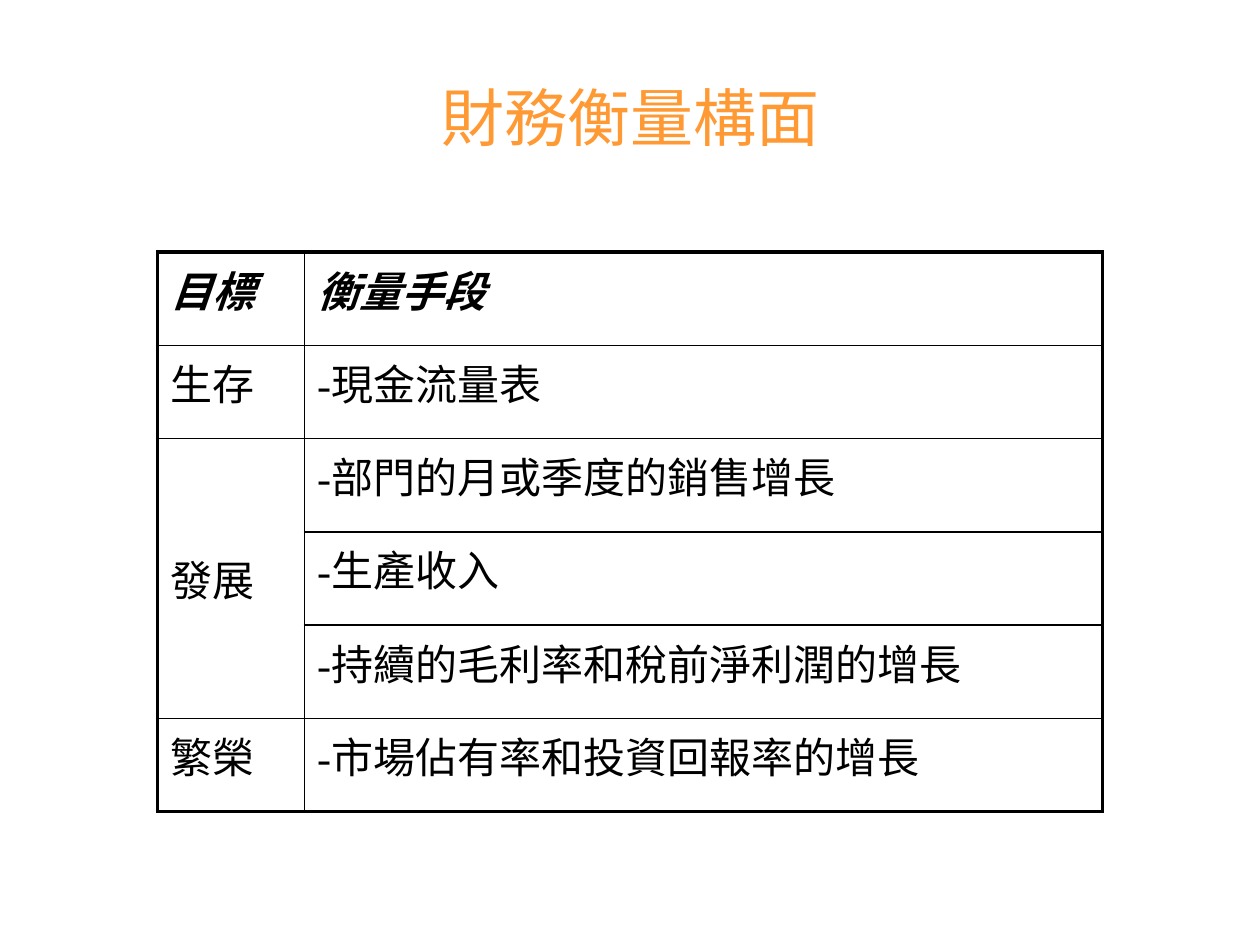
from typing import NamedTuple

from lxml.etree import SubElement
from pptx import Presentation
from pptx.dml.color import RGBColor
from pptx.enum.text import MSO_ANCHOR, PP_ALIGN
from pptx.oxml.ns import qn
from pptx.util import Pt

CJK_FONT = "Noto Sans CJK JP"
LATIN_FONT = "Times New Roman"
ORANGE = "FF9933"
BLACK = "000000"
THIN, THICK = 1, 2.25
ROW_HEIGHT = 53.3
COLUMN_WIDTHS = (84, 456)


class Goal(NamedTuple):
    name: str
    measures: tuple[str, ...]
    header: bool = False


GOALS = (
    Goal("目標", ("衡量手段",), header=True),
    Goal("生存", ("-現金流量表",)),
    Goal("發展", ("-部門的月或季度的銷售增長", "-生產收入", "-持續的毛利率和稅前淨利潤的增長")),
    Goal("繁榮", ("-市場佔有率和投資回報率的增長",)),
)


def color(value: str) -> RGBColor:
    return RGBColor.from_string(value)


def write(frame, text: str, latin: str, fill: str, **formats) -> None:
    para = frame.paragraphs[0]
    span = para.add_run()
    span.text = text
    for name, value in {"name": latin, **formats}.items():
        setattr(span.font, name, value)
    span.font.color.rgb = color(fill)
    # East Asian glyphs take their own typeface
    SubElement(span.font._element, qn("a:ea"), typeface=CJK_FONT)


def add_border(cell, side: str, width: float) -> None:
    properties = cell._tc.get_or_add_tcPr()
    line = SubElement(properties, qn(f"a:ln{side}"), w=str(Pt(width)))
    fill = SubElement(line, qn("a:solidFill"))
    SubElement(fill, qn("a:srgbClr"), val=BLACK)


def frame_cell(cell, row: int, column: int, last_row: int) -> None:
    """Draw thick outer edges and thin inner ones, then clear the fill."""
    outer = {"L": column == 0, "R": column == 1, "T": row == 0, "B": row == last_row}
    for side, is_outer in outer.items():
        if cell.is_spanned and side in "TB":
            continue
        add_border(cell, side, THICK if is_outer else THIN)
    cell.fill.background()


def add_title(page, text: str) -> None:
    title = page.shapes.title
    box = {"left": 36, "top": 21.6, "width": 648, "height": 90}
    for name, value in box.items():
        setattr(title, name, Pt(value))
    title.text_frame.vertical_anchor = MSO_ANCHOR.MIDDLE
    write(title.text_frame, text, CJK_FONT, ORANGE, size=Pt(36))
    title.text_frame.paragraphs[0].alignment = PP_ALIGN.CENTER


def add_goal_table(page, goals: tuple[Goal, ...]) -> None:
    row_count = sum(len(goal.measures) for goal in goals)
    table = page.shapes.add_table(
        row_count, len(COLUMN_WIDTHS), Pt(90), Pt(144),
        Pt(sum(COLUMN_WIDTHS)), Pt(ROW_HEIGHT * row_count),
    ).table
    table.first_row = table.horz_banding = False
    for column, width in zip(table.columns, COLUMN_WIDTHS):
        column.width = Pt(width)
    for row in table.rows:
        row.height = Pt(ROW_HEIGHT)

    first = 0
    for goal in goals:
        formats = {"size": Pt(24), "bold": goal.header, "italic": goal.header}
        name_cell = table.cell(first, 0)
        if len(goal.measures) > 1:
            name_cell.merge(table.cell(first + len(goal.measures) - 1, 0))
            name_cell.vertical_anchor = MSO_ANCHOR.MIDDLE
        write(name_cell.text_frame, goal.name, LATIN_FONT, BLACK, **formats)
        for row, measure in enumerate(goal.measures, first):
            write(table.cell(row, 1).text_frame, measure, LATIN_FONT, BLACK, **formats)
        first += len(goal.measures)

    for row in range(row_count):
        for column in range(len(COLUMN_WIDTHS)):
            frame_cell(table.cell(row, column), row, column, row_count - 1)


def main() -> None:
    deck = Presentation()
    deck.slide_width, deck.slide_height = Pt(720), Pt(540)
    page = deck.slides.add_slide(deck.slide_layouts.get_by_name("Title Only"))
    add_title(page, "財務衡量構面")
    add_goal_table(page, GOALS)
    deck.save("out.pptx")


if __name__ == "__main__":
    main()
